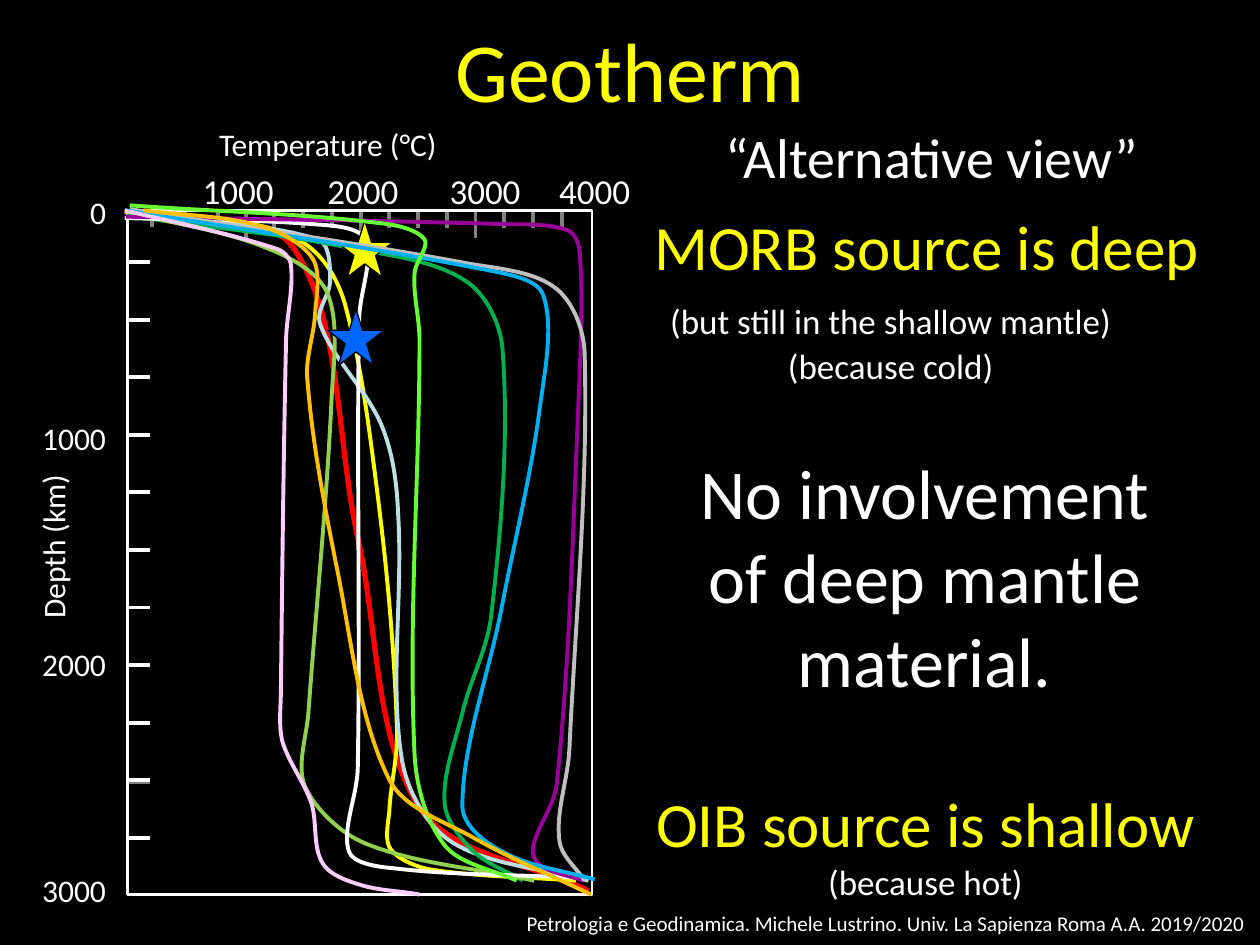
from itertools import pairwise
from math import dist

from lxml.etree import SubElement
from pptx import Presentation
from pptx.dml.color import RGBColor
from pptx.enum.shapes import MSO_CONNECTOR, MSO_SHAPE
from pptx.enum.text import MSO_ANCHOR, PP_ALIGN
from pptx.oxml.ns import qn
from pptx.util import Cm, Pt

WHITE, YELLOW, GREY = "FFFFFF", "FFFF00", "808080"


def color(value):
    return RGBColor.from_string(value)


def inch(value):
    return Cm(value * 2.54)


def spline(points):
    ends = [points[0], *points, points[-1]]
    slopes = []
    for before, here, after in zip(ends, points, ends[2:]):
        length = dist(before, here) + dist(here, after)
        slopes.append([(b - a) / length for a, b in zip(before, after)])
    controls = []
    for (start, out), (end, arrive) in pairwise(zip(points, slopes)):
        reach = dist(start, end) / 3
        controls += [[v + d * reach for v, d in zip(start, out)],
                     [v - d * reach for v, d in zip(end, arrive)], end]
    return controls


class SlideBuilder:
    font = "Calibri"

    def __init__(self, prs):
        self.s = prs.slides.add_slide(prs.slide_layouts[5])
        fill = self.s.background.fill
        fill.solid()
        fill.fore_color.rgb = color("000000")

    def style(self, p, text, size, rgb=WHITE, align=PP_ALIGN.CENTER):
        p.text = text
        p.alignment = align
        p.font.name = self.font
        p.font.size = Pt(size)
        p.font.color.rgb = color(rgb)

    def title(self, text, box):
        sp = self.s.shapes.title
        sp.left, sp.top, sp.width, sp.height = (inch(v) for v in box)
        sp.text_frame.vertical_anchor = MSO_ANCHOR.TOP
        self.style(sp.text_frame.paragraphs[0], text, 48, YELLOW)

    def text(self, box, *lines, align=PP_ALIGN.CENTER, wrap=True):
        sp = self.s.shapes.add_textbox(*(inch(v) for v in box))
        tf = sp.text_frame
        tf.word_wrap = wrap
        for i, (text, size, rgb) in enumerate(lines):
            p = tf.add_paragraph() if i else tf.paragraphs[0]
            self.style(p, text, size, rgb, align)
        return sp

    def label(self, text, size, box, align=PP_ALIGN.LEFT):
        return self.text(box, (text, size, WHITE), align=align, wrap=False)

    def line(self, x1, y1, x2, y2, rgb):
        sp = self.s.shapes.add_connector(
            MSO_CONNECTOR.STRAIGHT, inch(x1), inch(y1), inch(x2), inch(y2))
        sp.line.color.rgb = color(rgb)
        sp.line.width = Pt(2.25)
        SubElement(sp._element.spPr, qn("a:effectLst"))

    def outline(self, sp, rgb, width, fill=None):
        sp.shadow.inherit = False
        sp.line.color.rgb = color(rgb)
        sp.line.width = Pt(width)
        if fill:
            sp.fill.solid()
            sp.fill.fore_color.rgb = color(fill)
        else:
            sp.fill.background()

    def shape(self, kind, box, rgb, width, fill=None):
        sp = self.s.shapes.add_shape(kind, *(inch(v) for v in box))
        self.outline(sp, rgb, width, fill)

    def curve(self, rgb, values, width=2.25):
        points = list(zip(values[::2], values[1::2]))
        builder = self.s.shapes.build_freeform(*points[0], scale=Cm(0.0254))
        builder.add_line_segments(spline(points), close=False)
        sp = builder.convert_to_shape()
        geometry = next(sp._element.iter(qn("a:path")))
        segments = geometry.findall(qn("a:lnTo"))
        for i in range(0, len(segments), 3):
            bezier = SubElement(geometry, qn("a:cubicBezTo"))
            for segment in segments[i:i + 3]:
                bezier.append(segment[0])
                geometry.remove(segment)
        self.outline(sp, rgb, width)


CURVES_BEHIND = {
    YELLOW: [99, 168, 205, 179, 250, 200, 275, 246, 299, 387, 315, 578, 309, 644,
             310, 674, 341, 690, 457, 699],
    "BBE0E3": [102, 171, 252, 190, 262, 223, 254, 257, 303, 338, 316, 408, 319, 603,
               358, 668, 467, 699],
    "00B050": [101, 171, 279, 197, 371, 224, 399, 279, 390, 488, 367, 566, 353, 638,
               375, 675, 415, 699],
    "92D050": [104, 169, 212, 197, 260, 233, 263, 321, 245, 563, 242, 624, 289, 669,
               424, 699],
    WHITE: [99, 173, 249, 178, 290, 190, 285, 255, 284, 608, 277, 676, 311, 689, 463, 697],
    "990099": [100, 172, 404, 178, 451, 183, 460, 200, 460, 301, 442, 622, 423, 673,
               429, 687, 463, 699],
}
CURVES_FRONT = {
    "BFBFBF": [103, 166, 365, 208, 440, 228, 464, 279, 452, 594, 444, 667, 464, 699],
    "00B0F0": [100, 167, 390, 215, 431, 234, 428, 327, 398, 483, 367, 640, 399, 676,
               472, 698],
    "66FF33": [103, 163, 300, 177, 337, 190, 329, 218, 333, 270, 329, 597, 353, 671,
               410, 699],
    "FFC000": [114, 167, 205, 179, 248, 205, 250, 250, 244, 302, 268, 454, 309, 619,
               376, 665, 469, 710],
    "FFCCFF": [99, 167, 221, 198, 231, 211, 227, 273, 223, 547, 224, 588, 247, 637,
               256, 685, 285, 702, 333, 710],
}


def main():
    prs = Presentation()
    prs.slide_width, prs.slide_height = Cm(25.4), Cm(19.05)
    b = SlideBuilder(prs)
    b.title("Geotherm", (0, 0.1, 10, 0.9))
    b.text((3.97, 7.18, 6.01, 0.3),
           ("Petrologia e Geodinamica. Michele Lustrino. Univ. La Sapienza Roma A.A. 2019/2020",
            12, WHITE), align=PP_ALIGN.RIGHT)

    b.label("Depth (km)", 18, (-0.26, 4.13, 1.36, 0.4)).rotation = 270
    b.label("Temperature (°C)", 18, (1.64, 0.94, 1.97, 0.4))
    for text, x in (("1000", 1.51), ("2000", 2.5), ("3000", 3.47), ("4000", 4.34)):
        b.label(text, 20, (x, 1.3, 0.77, 0.44))
    for i in range(4):
        b.label(str(i * 1000), 18, (0.23, 1.48 + i * 1.795, 0.71, 0.4), PP_ALIGN.RIGHT)

    b.line(1.01, 6.21, 1.19, 6.21, GREY)
    for i in range(11):
        y = 2.08 + i * 0.457
        b.line(1.01, y, 1.19, y, WHITE)
    for i in range(3):
        x = 1.21 + i * 0.26
        b.line(x, 1.67, x, 1.8, GREY)
    for i in range(12):
        x = 1.95 + i * 0.228
        b.line(x, 1.68, x, 1.81 if i % 4 else 1.89, GREY)
    b.shape(MSO_SHAPE.RECTANGLE, (1.01, 1.67, 3.69, 5.43), WHITE, 1.5)

    b.curve("FF0000", [105, 170, 233, 197, 284, 427, 333, 641, 467, 707], 3)
    for rgb, values in CURVES_BEHIND.items():
        b.curve(rgb, values)
    for x, y, fill in ((2.6, 2.45, "0066FF"), (2.67, 1.75, YELLOW)):
        b.shape(MSO_SHAPE.STAR_5_POINT, (x, y, 0.45, 0.45), "000000", 0.75, fill)
    for rgb, values in CURVES_FRONT.items():
        b.curve(rgb, values)

    b.text((4.71, 0.92, 5.37, 0.63), ("“Alternative view”", 32, WHITE))
    sp = b.text((4.71, 1.6, 5.29, 1.58), ("MORB source is deep", 36, YELLOW),
                ("(but still in the shallow mantle)", 20, WHITE), ("(because cold)", 20, WHITE))
    shallow, cold = sp.text_frame.paragraphs[1:]
    shallow.space_before, cold.space_before = Pt(9), Pt(2)
    shallow._p.get_or_add_pPr().set("marR", str(Cm(1.45)))
    b.text((5.43, 3.52, 3.82, 2.12), ("No involvement of deep mantle material.", 40, WHITE))
    b.text((4.72, 6.18, 5.25, 1.04), ("OIB source is shallow", 36, YELLOW),
           ("(because hot)", 20, WHITE))
    prs.save("out.pptx")


if __name__ == "__main__":
    main()
